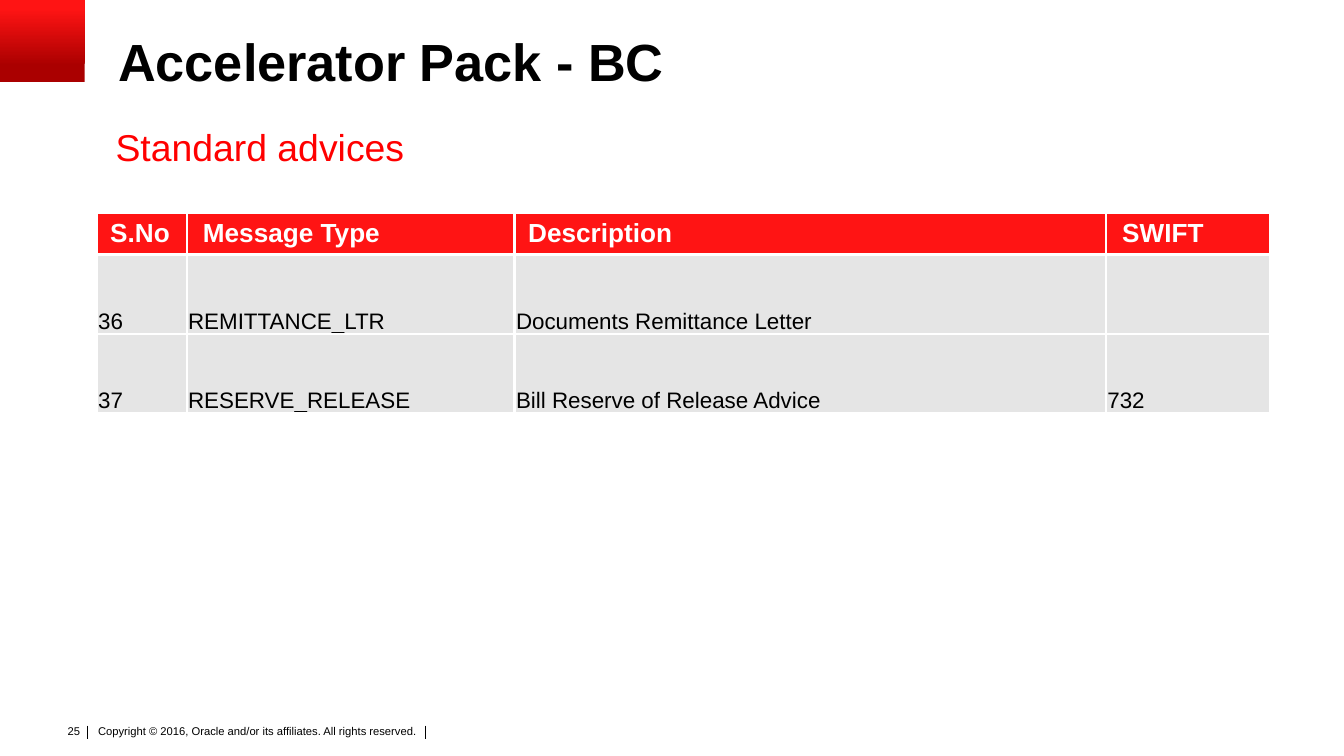
"""Build the standard advices slide, with lengths as percent shares of the slide."""
from typing import NamedTuple

from lxml import etree
from pptx import Presentation
from pptx.dml.color import RGBColor
from pptx.enum.shapes import MSO_CONNECTOR, MSO_SHAPE
from pptx.enum.text import MSO_ANCHOR, PP_ALIGN
from pptx.oxml.ns import qn
from pptx.util import Inches, Pt

LEFT, RIGHT = PP_ALIGN.LEFT, PP_ALIGN.RIGHT
MIDDLE, BOTTOM = MSO_ANCHOR.MIDDLE, MSO_ANCHOR.BOTTOM
RECT, STRAIGHT = MSO_SHAPE.RECTANGLE, MSO_CONNECTOR.STRAIGHT
WIDTH = Inches(10)
HEIGHT = WIDTH * 9 // 16
FONT = "Arial"
BLACK, WHITE, RED = "000000", "FFFFFF", "FF1414"
DARK, PURE, GREY = "AA0000", "FF0000", "E5E5E5"


class Box(NamedTuple):
    """Place on the slide, in percent of its width and height."""
    left: float
    top: float
    width: float
    height: float


class Style(NamedTuple):
    """Look of a run of text."""
    size: float
    color: str = BLACK
    bold: bool = False


class Label(NamedTuple):
    """Text box with its insets in inches."""
    text: str
    box: Box
    style: Style
    pad: tuple[float, float] = (0, 0)
    align: PP_ALIGN = LEFT
    wrap: bool = True
    lead: float = 1.0


class Band(NamedTuple):
    """Look of a table row, with insets in inches."""
    style: Style
    fill: str
    anchor: MSO_ANCHOR
    pad: tuple[float, float, float, float]


LABELS = [
    Label("Copyright © 2016, Oracle and/or its affiliates. All rights reserved.",
          Box(6.9, 95.47, 27.4, 4.27), Style(6), (0.04, 0.02)),
    Label("25", Box(3.95, 94.93, 3, 3.56), Style(6), (0.1, 0.05), RIGHT, False),
    Label("Standard advices", Box(8.6, 16.42, 90, 5.87), Style(20, PURE)),
    Label("Accelerator Pack - BC", Box(8.8, 4.8, 85, 14.76),
          Style(28, BLACK, True), lead=0.9),
]
BARS = [6.53, 31.65]
BAR_TOP, BAR_END = 96, 97.78
CORNER = Box(0, 0, 6.3, 10.84)

HEAD = Band(Style(14, WHITE, True), RED, MIDDLE, (0.1, 0.04, 0.1, 0.04))
BODY = Band(Style(12), GREY, BOTTOM, (0.01, 0.01, 0.01, 0))
COLS = [6.7, 24.4, 44, 12.2]
ROWS = [5.54, 10.5, 10.5]
INDENTS = [0, 0.02, 0, 0.02]
SIDES = ["RTB", "LRTB", "LRTB", "LTB"]
CELLS = [
    ["S.No", "Message Type", "Description", "SWIFT"],
    ["36", "REMITTANCE_LTR", "Documents Remittance Letter", ""],
    ["37", "RESERVE_RELEASE", "Bill Reserve of Release Advice", "732"],
]


def across(share: float) -> int:
    """Turn a percent share of the width into a length."""
    return round(WIDTH * share / 100)


def down(share: float) -> int:
    """Turn a percent share of the height into a length."""
    return round(HEIGHT * share / 100)


def place(box: Box) -> tuple[int, int, int, int]:
    """Turn a box into slide lengths."""
    return across(box.left), down(box.top), across(box.width), down(box.height)


def tint(color: str) -> RGBColor:
    """Turn a hex string into a colour."""
    return RGBColor.from_string(color)


def add_run(para, text: str, style: Style) -> None:
    """Add one styled run to a paragraph."""
    run = para.add_run()
    run.text = text
    run.font.name = FONT
    run.font.size = Pt(style.size)
    run.font.bold = style.bold
    run.font.color.rgb = tint(style.color)


def draw_label(slide, label: Label) -> None:
    """Draw a text box."""
    frame = slide.shapes.add_textbox(*place(label.box)).text_frame
    frame.word_wrap = label.wrap
    side, edge = label.pad
    frame.margin_left = frame.margin_right = Inches(side)
    frame.margin_top = frame.margin_bottom = Inches(edge)
    para = frame.paragraphs[0]
    para.alignment = label.align
    para.line_spacing = label.lead
    add_run(para, label.text, label.style)


def draw_bar(slide, spot: float) -> None:
    """Draw a thin footer bar."""
    bar = slide.shapes.add_connector(
        STRAIGHT, across(spot), down(BAR_TOP), across(spot), down(BAR_END))
    bar.line.color.rgb = tint(BLACK)
    bar.line.width = Pt(0.5)
    etree.SubElement(bar._element.spPr, qn("a:effectLst"))


def draw_corner(slide) -> None:
    """Draw the shaded corner block."""
    block = slide.shapes.add_shape(RECT, *place(CORNER))
    block.shadow.inherit = False
    block.line.fill.background()
    block.fill.gradient()
    block.fill.gradient_angle = 90
    for stop, (spot, color) in zip(block.fill.gradient_stops,
                                   [(0.2, DARK), (0.9, RED)]):
        stop.position = spot
        stop.color.rgb = tint(color)


def add_edges(cell, sides: str) -> None:
    """Give a cell white borders on the sides named."""
    props = cell._tc.get_or_add_tcPr()
    for side in sides:
        edge = etree.SubElement(props, qn(f"a:ln{side}"), w=str(Pt(1.5)))
        fill = etree.SubElement(edge, qn("a:solidFill"))
        etree.SubElement(fill, qn("a:srgbClr"), val=WHITE)


def fill_cell(cell, text: str, band: Band, indent: float) -> None:
    """Style one cell and add its text."""
    cell.fill.solid()
    cell.fill.fore_color.rgb = tint(band.fill)
    cell.vertical_anchor = band.anchor
    left, top, right, bottom = band.pad
    cell.margin_left, cell.margin_right = Inches(left + indent), Inches(right)
    cell.margin_top, cell.margin_bottom = Inches(top), Inches(bottom)
    if text:
        add_run(cell.text_frame.paragraphs[0], text, band.style)


def draw_table(slide) -> None:
    """Draw the table of advices."""
    box = Box(7.2, 28.11, sum(COLS), sum(ROWS))
    table = slide.shapes.add_table(len(ROWS), len(COLS), *place(box)).table
    for col, share in zip(table.columns, COLS):
        col.width = across(share)
    for num, (row, share) in enumerate(zip(table.rows, ROWS)):
        row.height = down(share)
        band = BODY if num else HEAD
        for cell, text, indent, sides in zip(row.cells, CELLS[num], INDENTS, SIDES):
            add_edges(cell, sides)
            fill_cell(cell, text, band, 0 if num else indent)


def main() -> None:
    """Build and save the slide."""
    deck = Presentation()
    deck.slide_width, deck.slide_height = WIDTH, HEIGHT
    slide = deck.slides.add_slide(deck.slide_layouts[6])
    draw_corner(slide)
    for spot in BARS:
        draw_bar(slide, spot)
    for label in LABELS:
        draw_label(slide, label)
    draw_table(slide)
    deck.save("out.pptx")


if __name__ == "__main__":
    main()
